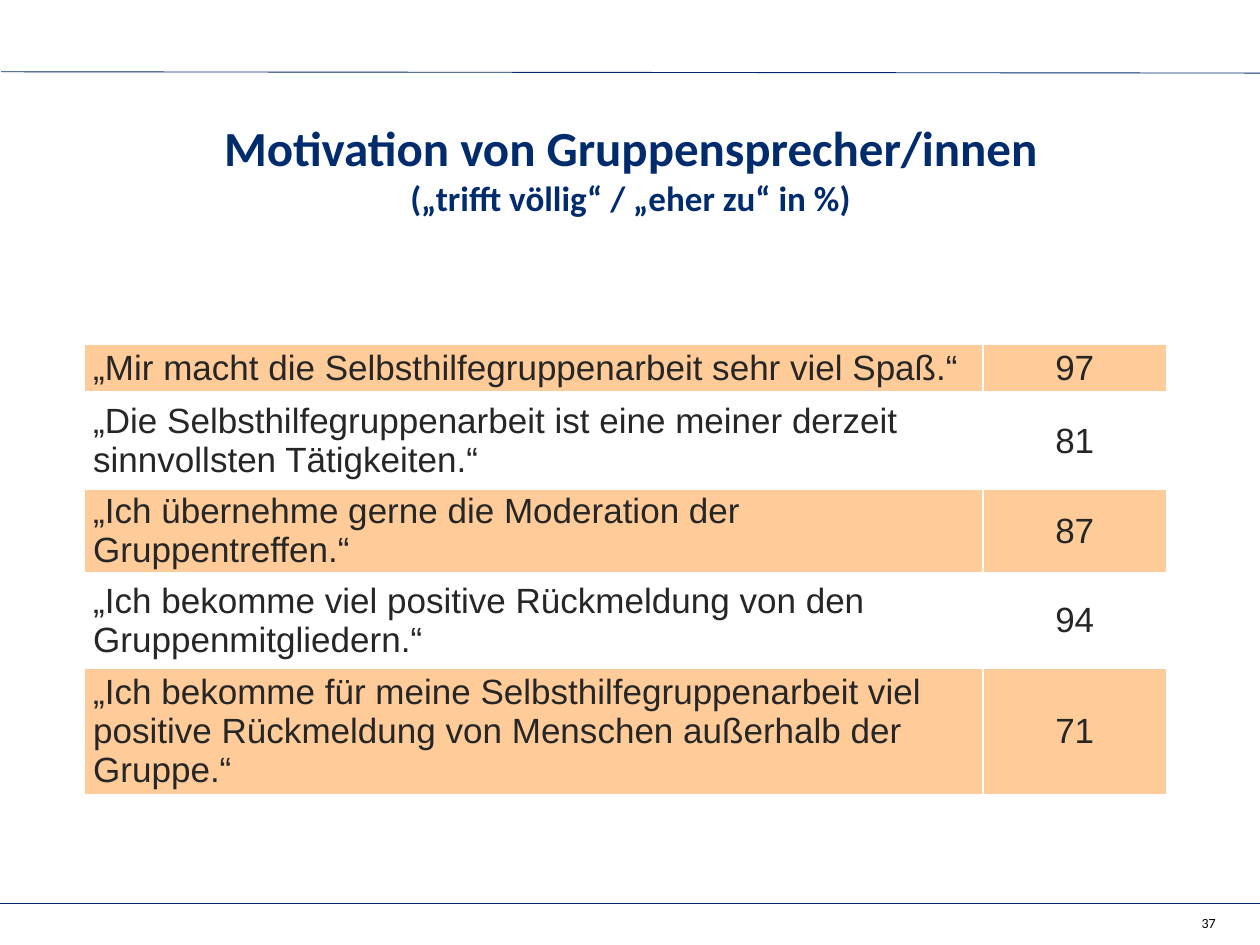
from lxml.etree import SubElement
from pptx import Presentation
from pptx.dml.color import RGBColor
from pptx.enum.shapes import MSO_CONNECTOR as Connector
from pptx.enum.text import MSO_ANCHOR as Anchor, PP_ALIGN as Align
from pptx.oxml.ns import qn
from pptx.util import Inches, Pt

COLORS = {
    "navy": "002B6D",
    "peach": "FFCC99",
    "white": "FFFFFF",
    "text": "262626",
    "black": "000000",
}
STATEMENTS = [
    ("„Mir macht die Selbsthilfegruppenarbeit sehr viel Spaß.“", 97, 0.39),
    ("„Die Selbsthilfegruppenarbeit ist eine meiner derzeit sinnvollsten Tätigkeiten.“", 81, 0.76),
    ("„Ich übernehme gerne die Moderation der Gruppentreffen.“", 87, 0.61),
    ("„Ich bekomme viel positive Rückmeldung von den Gruppenmitgliedern.“", 94, 0.76),
    ("„Ich bekomme für meine Selbsthilfegruppenarbeit viel positive Rückmeldung "
     "von Menschen außerhalb der Gruppe.“", 71, 0.92),
]
COLUMN_WIDTHS = [7.13, 1.46]


def color(name):
    return RGBColor.from_string(COLORS[name])


def add_span(para, text, size, font="Calibri", fill="navy", bold=False):
    span = para.add_run()
    span.text = text
    span.font.size = Pt(size)
    span.font.name = font
    span.font.bold = bold
    span.font.color.rgb = color(fill)


def add_box(page, left, top, width, height, align, margin=0.0):
    box = page.shapes.add_textbox(Inches(left), Inches(top), Inches(width), Inches(height))
    frame = box.text_frame
    frame.word_wrap = True
    frame.vertical_anchor = Anchor.MIDDLE
    frame.margin_left = frame.margin_right = Inches(margin)
    frame.margin_top = frame.margin_bottom = 0
    para = frame.paragraphs[0]
    para.alignment = align
    return para


def add_rule(page, start, end):
    rule = page.shapes.add_connector(Connector.STRAIGHT, *map(Inches, start + end))
    rule.line.color.rgb = color("navy")
    rule.line.width = Pt(0.5)
    SubElement(rule._element.spPr, qn("a:effectLst"))


def add_borders(cell, bottom):
    properties = cell._tc.get_or_add_tcPr()
    widths = {"L": 1, "R": 1, "T": 1, "B": bottom}
    for index, (side, width) in enumerate(widths.items()):
        line = properties.makeelement(qn(f"a:ln{side}"), {"w": str(Pt(width))})
        fill = SubElement(line, qn("a:solidFill"))
        SubElement(fill, qn("a:srgbClr"), val=COLORS["white"])
        properties.insert(index, line)


def fill_cell(cell, text, align, shaded, bottom):
    cell.vertical_anchor = Anchor.MIDDLE
    cell.margin_left = cell.margin_right = Inches(0.07)
    cell.margin_top = cell.margin_bottom = 0
    if shaded:
        cell.fill.solid()
        cell.fill.fore_color.rgb = color("peach")
    else:
        cell.fill.background()
    para = cell.text_frame.paragraphs[0]
    para.alignment = align
    add_span(para, text, 20, font="Arial", fill="text")
    add_borders(cell, bottom)


def add_statements(page, left, top):
    width = sum(COLUMN_WIDTHS)
    height = sum(row[2] for row in STATEMENTS)
    table = page.shapes.add_table(
        len(STATEMENTS), len(COLUMN_WIDTHS),
        Inches(left), Inches(top), Inches(width), Inches(height)).table
    table.first_row = table.horz_banding = False
    for column, column_width in zip(table.columns, COLUMN_WIDTHS):
        column.width = Inches(column_width)
    for index, (statement, percent, row_height) in enumerate(STATEMENTS):
        table.rows[index].height = Inches(row_height)
        shaded = index % 2 == 0
        bottom = 3 if index == 0 else 1
        fill_cell(table.cell(index, 0), statement, Align.LEFT, shaded, bottom)
        fill_cell(table.cell(index, 1), str(percent), Align.CENTER, shaded, bottom)


def main():
    deck = Presentation()
    deck.slide_width, deck.slide_height = Inches(10), Inches(7.5)
    page = deck.slides.add_slide(deck.slide_layouts[6])

    add_rule(page, (0.01, 0.57), (10, 0.58))
    add_rule(page, (0, 7.17), (10, 7.17))

    title = add_box(page, 0.67, 0.67, 8.67, 1.33, Align.CENTER, margin=0.1)
    add_span(title, "Motivation von Gruppensprecher/innen", 28, bold=True)
    title.add_line_break()
    add_span(title, "(„trifft völlig“ / „eher zu“ in %)", 20, bold=True)

    add_statements(page, 0.67, 2.73)

    number = add_box(page, 9.25, 7.24, 0.4, 0.17, Align.RIGHT)
    add_span(number, "37", 8, fill="black")

    deck.save("out.pptx")


if __name__ == "__main__":
    main()
